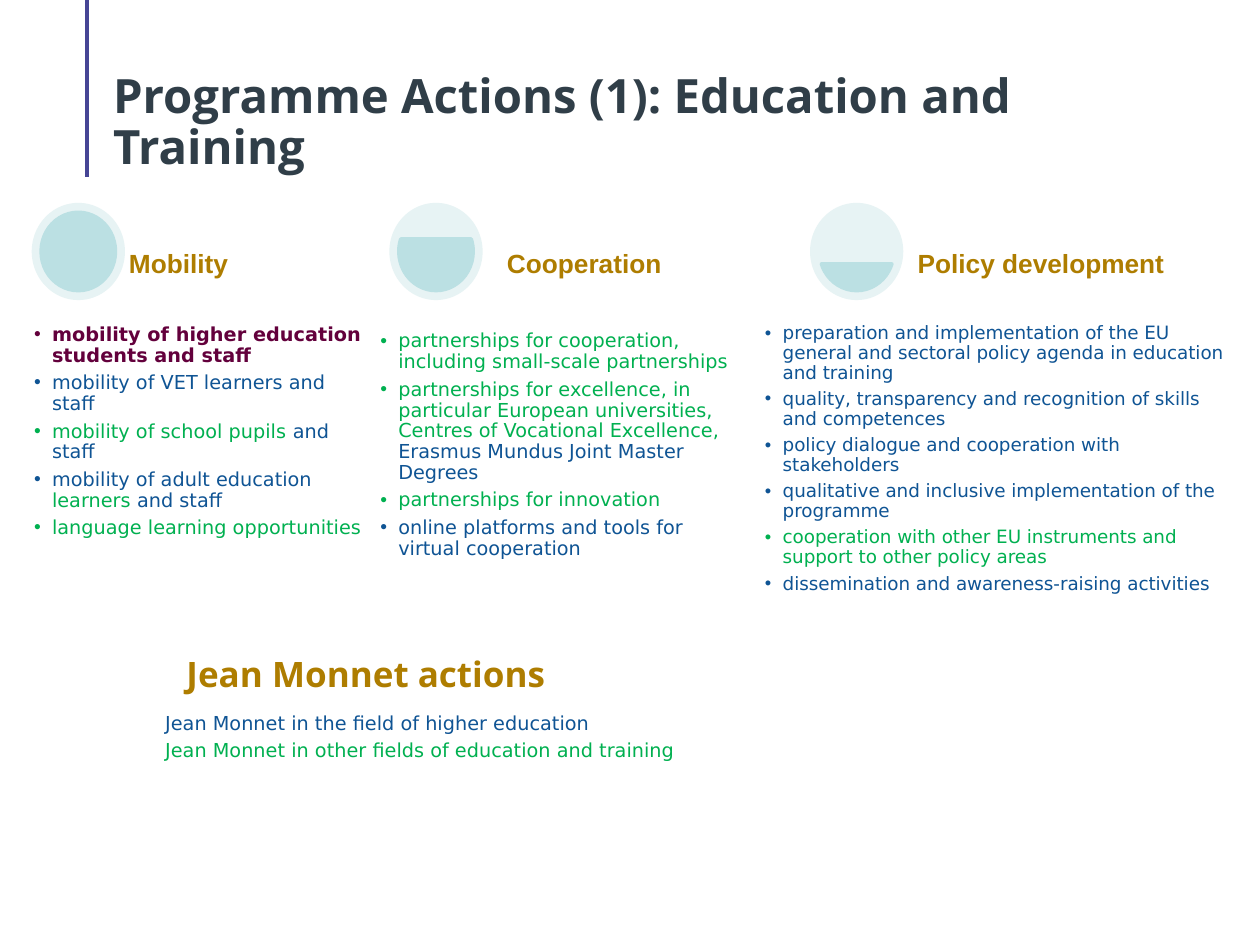
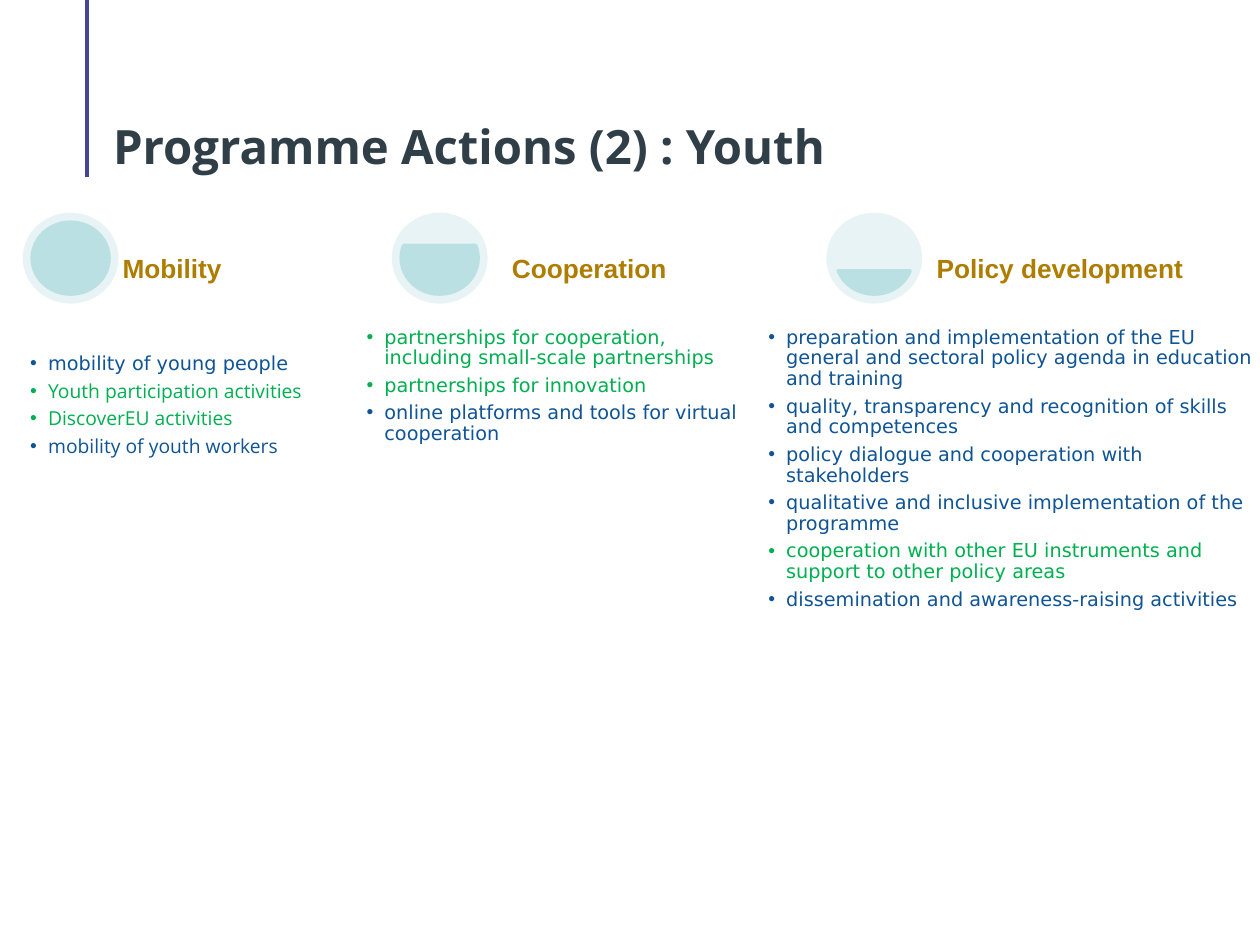
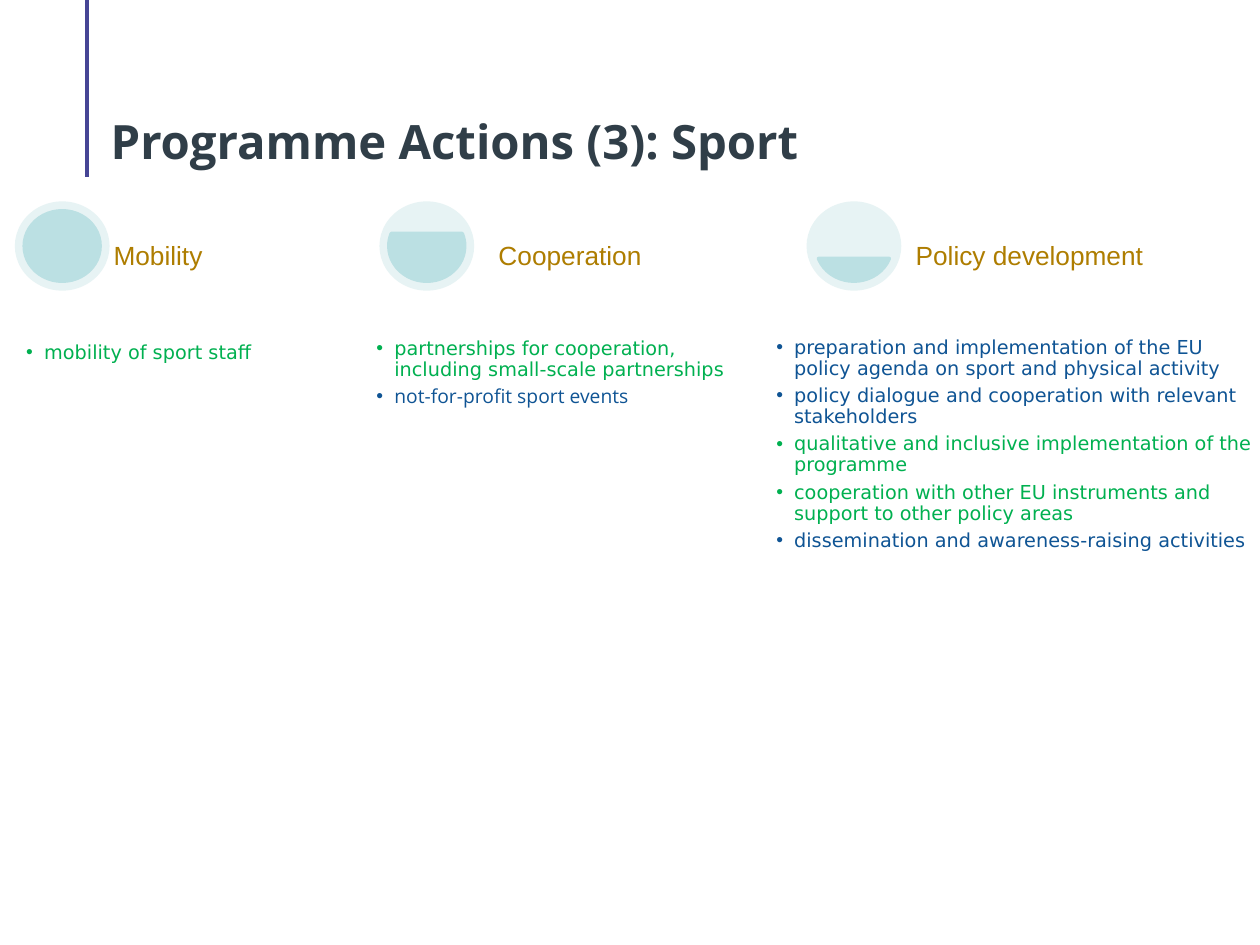
import pptx
import pptx.util
import pptx.dml.color
import pptx.enum.shapes
import pptx.enum.text
import lxml.etree

Cm, Pt = pptx.util.Cm, pptx.util.Pt
ANCHOR = pptx.enum.text.MSO_ANCHOR
SHAPE = pptx.enum.shapes.MSO_SHAPE
A = "{http://schemas.openxmlformats.org/drawingml/2006/main}"

THEME = {
    "colours": {
        "rule": "464595", "title": "303E48", "gold": "AE7D00", "navy": "0F5494",
        "green": "00B050", "plum": "63003C", "halo": "E7F3F4", "level": "BBE0E3",
    },
    "sizes": {"title": 27, "section": 20, "label": 15, "list": 11, "dense": 10.5},
    "fonts": {"title": "Open Sans", "label": "Arial", "list": "DejaVu Sans"},
}
COLOURS = {name: pptx.dml.color.RGBColor.from_string(code)
           for name, code in THEME["colours"].items()}
SIZES, FONTS = THEME["sizes"], THEME["fonts"]

# Column rules: label, fill level of the disc, label shift, label height to disc height
COLUMNS = [
    ("Mobility", (162, 162), 0, 0.62),
    ("Cooperation", (204.32, 119.68), 0.41, 0.75),
    ("Policy development", (11.68, 96.32), 0.21, 0.92),
]

# Wording used on several slides; each paragraph is a list of (colour, text, font)
PARTNERSHIPS = [("green", "partnerships for cooperation, including small-scale partnerships")]
INNOVATION = [("green", "partnerships for innovation")]
PLATFORMS = [("navy", "online platforms and tools for virtual cooperation")]
INSTRUMENTS = [("green", "cooperation with other EU instruments and support to other policy areas")]
DISSEMINATION = [("navy", "dissemination and awareness-raising activities")]
IMPLEMENTATION = "qualitative and inclusive implementation of the programme"
POLICY = [
    [("navy", "preparation and implementation of the EU general and sectoral policy agenda"
              " in education and training")],
    [("navy", "quality, transparency and recognition of skills and competences")],
    [("navy", "policy dialogue and cooperation with stakeholders")],
    [("navy", IMPLEMENTATION)],
    INSTRUMENTS,
    DISSEMINATION,
]

# Slides: places are left, top, width, height in centimetres
PAGES = [
    {
        "title": "Programme Actions (1): Education and Training",
        "title_place": (2.03, 1.35, 21.9, 2.18),
        "disc": (4.09, 1.88, 1.96), "disc_lefts": (0.64, 7.85, 16.33),
        "label_bold": True,
        "lists": [
            ((0.64, 6.5, 6.71, 8.28), "list", [
                [("plum", "mobility of higher education students and staff")],
                [("navy", "mobility of VET learners and staff")],
                [("green", "mobility of school pupils "), ("navy", "and staff")],
                [("navy", "mobility of adult education "), ("green", "learners "),
                 ("navy", "and staff")],
                [("green", "language learning opportunities")],
            ]),
            ((7.62, 6.63, 7.52, 8.28), "list", [
                PARTNERSHIPS,
                [("green", "partnerships for excellence, in particular European universities,"
                           " Centres of Vocational Excellence,"),
                 ("navy", " Erasmus Mundus Joint Master Degrees")],
                INNOVATION,
                PLATFORMS,
            ]),
            ((15.37, 6.48, 9.65, 10.85), "dense", POLICY),
        ],
    },
    {
        "title": "Programme Actions (2) : Youth",
        "title_place": (2.03, 1.35, 21.9, 2.18),
        "disc": (4.29, 1.93, 1.83), "disc_lefts": (0.46, 7.9, 16.66),
        "label_bold": True,
        "lists": [
            ((0.56, 7.09, 6.91, 7.75), "list", [
                [("navy", "mobility of young people")],
                [("green", "Youth participation activities", "title")],
                [("green", "DiscoverEU activities", "title")],
                [("navy", "mobility of youth workers", "title")],
            ]),
            ((7.34, 6.55, 7.77, 7.75), "list", [PARTNERSHIPS, INNOVATION, PLATFORMS]),
            ((15.44, 6.55, 9.96, 10.13), "list", POLICY),
        ],
    },
    {
        "title": "Programme Actions (3): Sport",
        "title_place": (1.98, 1.8, 21.9, 1.63),
        "disc": (4.06, 1.91, 1.8), "disc_lefts": (0.3, 7.65, 16.26),
        "label_bold": False,
        "lists": [
            ((0.48, 6.86, 6.81, 7.54), "list", [[("green", "mobility of sport staff")]]),
            ((7.54, 6.78, 7.65, 7.54), "list", [
                PARTNERSHIPS,
                [("navy", "not-for-profit sport events", "title")],
            ]),
            ((15.6, 6.76, 9.8, 9.88), "list", [
                [("navy", "preparation and implementation of the EU policy agenda on sport"
                          " and physical activity")],
                [("navy", "policy dialogue and cooperation with relevant stakeholders")],
                [("green", IMPLEMENTATION)],
                INSTRUMENTS,
                DISSEMINATION,
            ]),
        ],
    },
]


def format_frame(frame, anchor, insets):
    """Set wrapping, anchor and insets (left, top, right, bottom) of a text frame."""
    values = {"word_wrap": True, "auto_size": pptx.enum.text.MSO_AUTO_SIZE.NONE,
              "vertical_anchor": anchor}
    for side, inset in zip(("left", "top", "right", "bottom"), insets):
        values["margin_" + side] = Cm(inset)
    for name, value in values.items():
        setattr(frame, name, value)


def write_para(frame, index, spans, spacing, size, font, bold=False, indent=0, bullet=False):
    """Write one paragraph made of (colour, text, optional font) spans."""
    para = frame.paragraphs[0] if index == 0 else frame.add_paragraph()
    properties = para._p.get_or_add_pPr()
    if indent:
        properties.set("marL", str(Cm(indent)))
        properties.set("indent", str(-Cm(indent) if bullet else 0))
    if bullet:
        lxml.etree.SubElement(properties, A + "buFont", typeface="Arial")
        lxml.etree.SubElement(properties, A + "buChar", char="•")
    for name, value in spacing.items():
        setattr(para, name, value)
    for colour, text, *other_font in spans:
        span = para.add_run()
        span.text = text
        values = {"size": Pt(SIZES[size]), "name": FONTS[other_font[0] if other_font else font],
                  "bold": bold or colour == "plum"}
        for name, value in values.items():
            setattr(span.font, name, value)
        span.font.color.rgb = COLOURS[colour]


deck = pptx.Presentation()
deck.slide_width, deck.slide_height = Cm(25.4), Cm(19.05)

for content in PAGES:
    page = deck.slides.add_slide(deck.slide_layouts[5])

    # Vertical rule beside the title
    rule = page.shapes.add_connector(pptx.enum.shapes.MSO_CONNECTOR.STRAIGHT,
                                     Cm(1.75), Cm(0), Cm(1.75), Cm(3.56))
    rule.line.color.rgb = COLOURS["rule"]
    rule.line.width = Pt(2.25)
    lxml.etree.SubElement(rule._element.spPr, A + "effectLst")

    # Title
    title = page.shapes.title
    for name, value in zip(("left", "top", "width", "height"), content["title_place"]):
        setattr(title, name, Cm(value))
    format_frame(title.text_frame, ANCHOR.BOTTOM, (0.25, 0.13, 0.25, 0))
    write_para(title.text_frame, 0, [("title", content["title"])],
               {"line_spacing": 0.9, "alignment": pptx.enum.text.PP_ALIGN.LEFT},
               "title", "title", bold=True)

    # Three columns: disc, label and bulleted list
    top, width, height = content["disc"]
    for column, left, (place, size, items) in zip(COLUMNS, content["disc_lefts"],
                                                  content["lists"]):
        label, level_angles, label_shift, label_ratio = column

        halo = page.shapes.add_shape(SHAPE.OVAL, Cm(left), Cm(top), Cm(width), Cm(height))
        halo.line.fill.background()
        level = page.shapes.add_shape(SHAPE.CHORD, Cm(left + 0.19), Cm(top + 0.19),
                                      Cm(width - 0.38), Cm(height - 0.38))
        level.adjustments[0], level.adjustments[1] = level_angles
        level.line.color.rgb = COLOURS["level"]
        level.line.width = Pt(2)
        for shape, colour in ((halo, "halo"), (level, "level")):
            shape.shadow.inherit = False
            shape.fill.solid()
            shape.fill.fore_color.rgb = COLOURS[colour]

        label_height = label_ratio * height
        box = page.shapes.add_textbox(Cm(left + width + label_shift),
                                      Cm(top + 0.83 * height - label_height),
                                      Cm(2.96 * width), Cm(label_height))
        format_frame(box.text_frame, ANCHOR.BOTTOM, [0.08] * 4)
        write_para(box.text_frame, 0, [("gold", label)], {"line_spacing": 0.9},
                   "label", "label", bold=content["label_bold"])

        box = page.shapes.add_textbox(*map(Cm, place))
        format_frame(box.text_frame, ANCHOR.TOP, [0.05] * 4)
        for index, spans in enumerate(items):
            write_para(box.text_frame, index, spans,
                       {"line_spacing": 0.9, "space_after": Pt(0.35 * SIZES[size])},
                       size, "list", indent=0.36, bullet=True)

# Jean Monnet block on the first slide
box = deck.slides[0].shapes.add_textbox(Cm(2.18), Cm(13.16), Cm(17.73), Cm(3))
format_frame(box.text_frame, ANCHOR.TOP, (0.18, 0.1, 0.18, 0.1))
write_para(box.text_frame, 0, [("gold", "Jean Monnet actions")],
           {"line_spacing": 0.9, "space_after": Pt(7)}, "section", "title",
           bold=True, indent=1.4)
fields = [("navy", "Jean Monnet in the field of higher education"),
          ("green", "Jean Monnet in other fields of education and training")]
for index, field in enumerate(fields, start=1):
    write_para(box.text_frame, index, [field], {"space_before": Pt(2.2)},
               "list", "list", indent=0.97)

deck.save("out.pptx")
